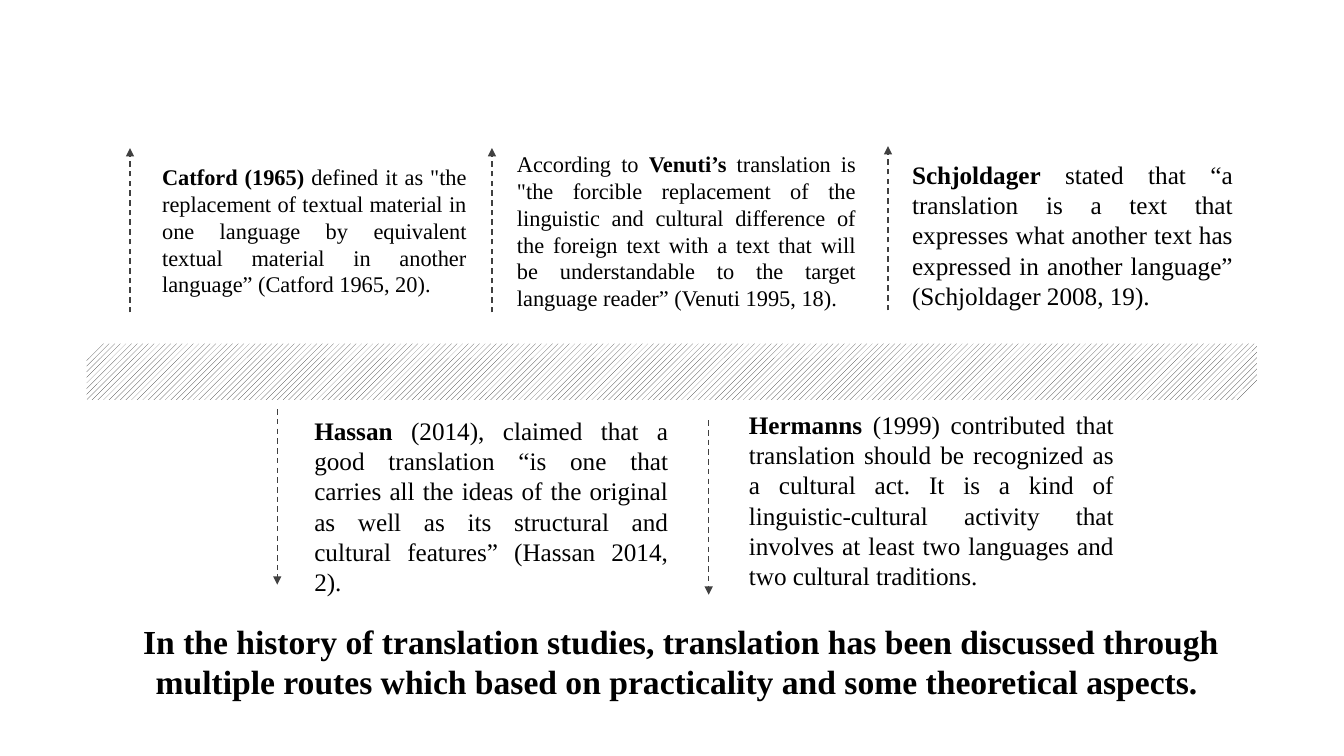
"""Build a slide of five translation definitions around a hatched timeline bar."""
from lxml.etree import SubElement
from pptx import Presentation
from pptx.dml.color import RGBColor
from pptx.enum.dml import MSO_LINE, MSO_PATTERN
from pptx.enum.shapes import MSO_CONNECTOR, MSO_SHAPE
from pptx.enum.text import MSO_AUTO_SIZE, PP_ALIGN
from pptx.oxml.ns import qn
from pptx.util import Pt

BLACK = RGBColor(0x00, 0x00, 0x00)
WHITE = RGBColor(0xFF, 0xFF, 0xFF)
HATCH = RGBColor(0x26, 0x26, 0x26)
ARROW = RGBColor(0x40, 0x40, 0x40)
FONT = "Times New Roman"


def add_text(page, place, spans, size, alignment):
    box = page.shapes.add_textbox(*(Pt(length) for length in place))
    frame = box.text_frame
    frame.word_wrap = True
    frame.auto_size = MSO_AUTO_SIZE.SHAPE_TO_FIT_TEXT
    para = frame.paragraphs[0]
    para.alignment = alignment
    for text, bold in spans:
        span = para.add_run()
        span.text = text
        span.font.name = FONT
        span.font.size = Pt(size)
        span.font.bold = bold
        span.font.color.rgb = BLACK


def add_arrow(page, x, start, end):
    arrow = page.shapes.add_connector(MSO_CONNECTOR.STRAIGHT, Pt(x), Pt(start), Pt(x), Pt(end))
    arrow.line.color.rgb = ARROW
    arrow.line.width = Pt(1)
    arrow.line.dash_style = MSO_LINE.DASH
    properties = arrow._element.spPr
    SubElement(properties.find(qn("a:ln")), qn("a:tailEnd"), type="triangle")
    SubElement(properties, qn("a:effectLst"))


deck = Presentation()
deck.slide_width, deck.slide_height = Pt(960), Pt(540)
page = deck.slides.add_slide(deck.slide_layouts[6])

bar = page.shapes.add_shape(MSO_SHAPE.CUBE, Pt(61.9), Pt(245.5), Pt(835.9), Pt(39.6))
bar.shadow.inherit = False
bar.fill.patterned()
bar.fill.pattern = MSO_PATTERN.WIDE_UPWARD_DIAGONAL
bar.fill.fore_color.rgb = HATCH
bar.fill.back_color.rgb = WHITE
bar.line.fill.background()

definitions = [
    ((92.9, 223.2, 105.8), (108.7, 113, 231.8, 104.4), 16, [
        ("Catford (1965) ", True),
        ('defined it as "the replacement of textual material in one language by '
         "equivalent textual material in another language” (Catford 1965, 20). ", False)]),
    ((351.4, 223.2, 105.8), (362.2, 103.7, 256.3, 123.8), 16, [
        ("According to ", False),
        ("Venuti’s", True),
        (' translation is "the forcible replacement of the linguistic and cultural '
         "difference of the foreign text with a text that will be understandable to "
         "the target language reader” (Venuti 1995, 18). ", False)]),
    ((634.3, 221.8, 104.4), (644.4, 110.2, 243.4, 116.6), 18, [
        ("Schjoldager ", True),
        ("stated that “a translation is a text that expresses what another text has "
         "expressed in another language” (Schjoldager 2008, 19). ", False)]),
    ((198, 292.3, 417.6), (217.4, 293, 267.1, 116.6), 18, [
        ("Hassan ", True),
        ("(2014), claimed that a good translation “is one that carries all the ideas "
         "of the original as well as its structural and cultural features” "
         "(Hassan 2014, 2).", False)]),
    ((506.2, 300.2, 424.8), (527.8, 288.7, 275, 138.2), 18, [
        ("Hermanns ", True),
        ("(1999) contributed that translation should be recognized as a cultural act. "
         "It is a kind of linguistic-cultural activity that involves at least two "
         "languages and two cultural traditions.", False)]),
]
for arrow_ends, place, size, spans in definitions:
    add_arrow(page, *arrow_ends)
    add_text(page, place, spans, size, PP_ALIGN.JUSTIFY)

summary = ("In the history of translation studies, translation has been discussed through "
           "multiple routes which based on practicality and some theoretical aspects. ")
add_text(page, (74.9, 439.9, 823, 65.5), [(summary, True)], 24, PP_ALIGN.CENTER)

deck.save("out.pptx")
